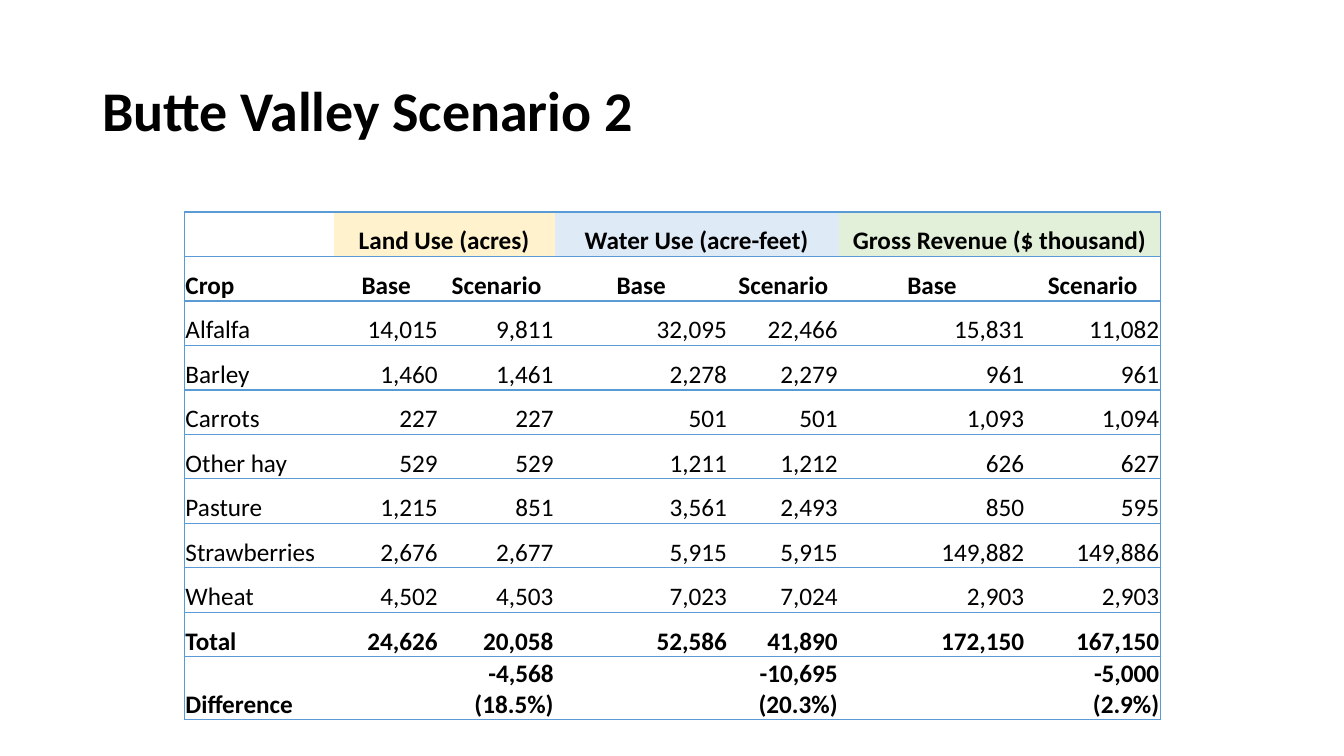
from lxml import etree
from pptx import Presentation
from pptx.dml.color import RGBColor
from pptx.enum.text import MSO_ANCHOR, PP_ALIGN
from pptx.oxml.ns import qn
from pptx.util import Pt

LEFT, CENTER, RIGHT = PP_ALIGN.LEFT, PP_ALIGN.CENTER, PP_ALIGN.RIGHT
MIDDLE, BOTTOM = MSO_ANCHOR.MIDDLE, MSO_ANCHOR.BOTTOM
NO_STYLE = "{2D5ABB26-0587-4C30-8999-92F81FD0307C}"

GROUPS = [
    ("Land Use (acres)", "FFF2CC"),
    ("Water Use (acre-feet)", "DEEBF7"),
    ("Gross Revenue ($ thousand)", "E2F0D9"),
]
HEADINGS = ["Crop"] + ["Base", "Scenario"] * len(GROUPS)
CROPS = [
    ["Alfalfa", "14,015", "9,811", "32,095", "22,466", "15,831", "11,082"],
    ["Barley", "1,460", "1,461", "2,278", "2,279", "961", "961"],
    ["Carrots", "227", "227", "501", "501", "1,093", "1,094"],
    ["Other hay", "529", "529", "1,211", "1,212", "626", "627"],
    ["Pasture", "1,215", "851", "3,561", "2,493", "850", "595"],
    ["Strawberries", "2,676", "2,677", "5,915", "5,915", "149,882", "149,886"],
    ["Wheat", "4,502", "4,503", "7,023", "7,024", "2,903", "2,903"],
]
SUMMARY = [
    ["Total", "24,626", "20,058", "52,586", "41,890", "172,150", "167,150"],
    ["Difference", "", "-4,568 (18.5%)", "", "-10,695 (20.3%)", "", "-5,000 (2.9%)"],
]
COL_WIDTHS = [106.6, 74.9, 82.8, 123.8, 79.2, 133.2, 96.5]
ROW_HEIGHT, LAST_ROW_HEIGHT = 31.8, 45


def rgb(color):
    return RGBColor.from_string(color)


class SlideBuilder:
    font = "Calibri"
    ink = "000000"
    paper = "FFFFFF"
    rule = "5B9BD5"

    def __init__(self, prs):
        self.s = prs.slides.add_slide(prs.slide_layouts[6])

    def add_text(self, tf, text, size, bold, align=LEFT):
        p = tf.paragraphs[0]
        p.alignment = align
        r = p.add_run()
        r.text = text
        r.font.name = self.font
        r.font.size = Pt(size)
        r.font.bold = bold
        r.font.color.rgb = rgb(self.ink)
        return p

    def title(self, text, left, top, width, height):
        tf = self.s.shapes.add_textbox(Pt(left), Pt(top), Pt(width), Pt(height)).text_frame
        tf.word_wrap = True
        tf.vertical_anchor = MIDDLE
        self.add_text(tf, text, 40, True).line_spacing = 0.9

    def table(self, left, top, widths, heights):
        """Add a table without banding, header emphasis or style borders."""
        frame = self.s.shapes.add_table(
            len(heights), len(widths), Pt(left), Pt(top), Pt(sum(widths)), Pt(sum(heights)))
        table = frame.table
        table.first_row = table.horz_banding = False
        frame._element.find(".//" + qn("a:tableStyleId")).text = NO_STYLE
        for column, width in zip(table.columns, widths):
            column.width = Pt(width)
        for row, height in zip(table.rows, heights):
            row.height = Pt(height)
        return table

    def border(self, cell, sides):
        tc_pr = cell._tc.get_or_add_tcPr()
        for side in sides:
            line = etree.SubElement(tc_pr, qn("a:ln" + side), w=str(Pt(1)))
            fill = etree.SubElement(line, qn("a:solidFill"))
            etree.SubElement(fill, qn("a:srgbClr"), val=self.rule)

    def cell(self, cell, text, sides, bold=False, align=LEFT, fill=None):
        cell.margin_left = cell.margin_right = cell.margin_top = Pt(0.7)
        cell.margin_bottom = Pt(0)
        cell.vertical_anchor = BOTTOM
        self.border(cell, sides)
        cell.fill.solid()
        cell.fill.fore_color.rgb = rgb(fill or self.paper)
        if text:
            self.add_text(cell.text_frame, text, 18, bold, align)


def main():
    prs = Presentation()
    prs.slide_width, prs.slide_height = Pt(960), Pt(540)
    slide = SlideBuilder(prs)
    slide.title("Butte Valley Scenario 2", 66, 28.8, 828, 104.4)

    group_row, group_fills = [""], [None]
    for name, fill in GROUPS:
        group_row += [name, ""]
        group_fills += [fill, fill]
    rows = [group_row, HEADINGS] + CROPS + SUMMARY
    heights = [ROW_HEIGHT] * (len(rows) - 1) + [LAST_ROW_HEIGHT]
    table = slide.table(131.8, 151.4, COL_WIDTHS, heights)
    for col in range(1, len(HEADINGS), 2):
        table.cell(0, col).merge(table.cell(0, col + 1))

    last_col = len(HEADINGS) - 1
    for i, row in enumerate(rows):
        header = i < 2
        bold = header or row in SUMMARY
        for j, text in enumerate(row):
            at_right = j == last_col or (i == 0 and j == last_col - 1)
            sides = ("L" if j == 0 else "") + ("R" if at_right else "") + "TB"
            align = LEFT if j == 0 else CENTER if header else RIGHT
            fill = group_fills[j] if i == 0 else None
            slide.cell(table.cell(i, j), text, sides, bold, align, fill)

    prs.save("out.pptx")


if __name__ == "__main__":
    main()
